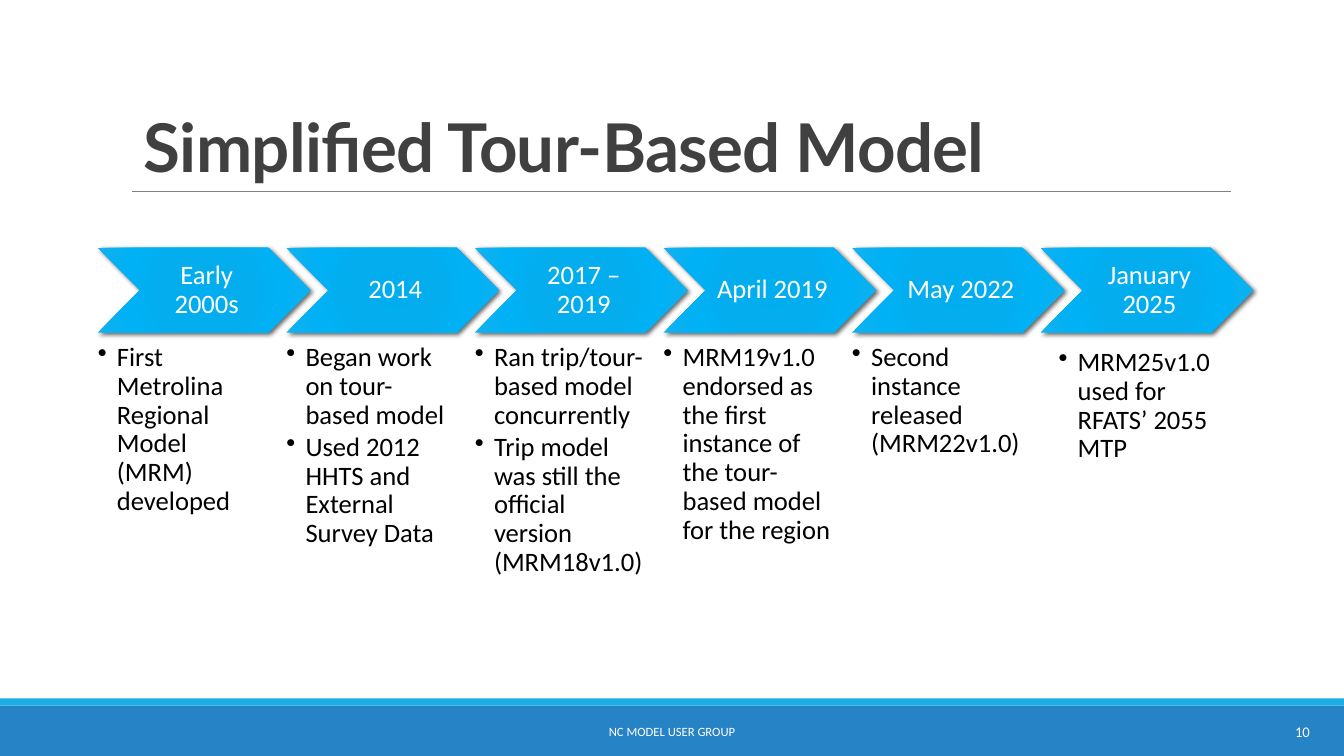
from dataclasses import dataclass

from lxml import etree
from pptx import Presentation
from pptx import util as u
from pptx.dml.color import RGBColor
from pptx.enum import shapes, text
from pptx.oxml import ns


@dataclass(frozen=True)
class Theme:
    footer: str = "2683C6"
    accent: str = "1CADE4"
    rule: str = "808080"
    title: str = "404040"
    body: str = "000000"
    light: str = "FFFFFF"
    shadow: str = "000000"
    chevron: tuple = ((0, "00ADEF"), (34, "03ADEE"), (70, "00B1F5"), (100, "12B1EE"))
    title_font: str = "Lato"
    body_font: str = "Calibri"
    title_size: float = 48
    body_size: float = 19
    page_size: float = 10.5
    footer_size: float = 9


# The grid has 133.3 columns and 75 rows, each a tenth of an inch
CELL = 0.1
COLUMNS, ROWS = 133.3, 75


def cells(count):
    return u.Inches(count * CELL)


def add_xml(parent, tag, **attributes):
    names = {key: str(value) for key, value in attributes.items()}
    return etree.SubElement(parent, ns.qn(tag), names)


class SlideBuilder:
    def __init__(self, deck, theme):
        self.theme = theme
        self.page = deck.slides.add_slide(deck.slide_layouts[6])

    def shape(self, kind, left, top, width, height):
        shape = self.page.shapes.add_shape(kind, *map(cells, (left, top, width, height)))
        shape.shadow.inherit = False
        shape.line.fill.background()
        return shape

    def bar(self, top, height, color):
        bar = self.shape(shapes.MSO_SHAPE.RECTANGLE, 0, top, COLUMNS, height)
        bar.fill.solid()
        bar.fill.fore_color.rgb = RGBColor.from_string(color)

    def rule(self, left, right, top):
        rule = self.page.shapes.add_connector(
            shapes.MSO_CONNECTOR.STRAIGHT, cells(left), cells(top), cells(right), cells(top))
        rule.line.color.rgb = RGBColor.from_string(self.theme.rule)
        rule.line.width = u.Pt(0.5)
        add_xml(rule._element.spPr, "a:effectLst")

    def set_text(self, shape, lines, size, color, font=None, align=text.PP_ALIGN.LEFT,
                 anchor=text.MSO_ANCHOR.MIDDLE, insets=(1, 0.5, 1, 0.5), spacing=1.0):
        frame = shape.text_frame
        frame.word_wrap = True
        frame.vertical_anchor = anchor
        (frame.margin_left, frame.margin_top,
         frame.margin_right, frame.margin_bottom) = map(cells, insets)
        for index, line in enumerate(lines):
            para = frame.add_paragraph() if index else frame.paragraphs[0]
            para.text = line
            para.alignment = align
            para.line_spacing = spacing
            para.font.name = font or self.theme.body_font
            para.font.size = u.Pt(size)
            para.font.color.rgb = RGBColor.from_string(color)
        return frame.paragraphs

    def text(self, left, top, width, height, lines, size, color, **style):
        box = self.page.shapes.add_textbox(*map(cells, (left, top, width, height)))
        return self.set_text(box, lines, size, color, **style)

    def title(self, left, top, width, height, line):
        theme = self.theme
        para, = self.text(left, top, width, height, [line], theme.title_size, theme.title,
                          font=theme.title_font, anchor=text.MSO_ANCHOR.BOTTOM, spacing=0.85)
        para.font.bold = True
        for span in para.runs:
            span._r.get_or_add_rPr().set("spc", "-50")

    def bullets(self, left, top, width, height, lines, insets):
        paras = self.text(left, top, width, height, lines, self.theme.body_size,
                          self.theme.body, anchor=text.MSO_ANCHOR.TOP,
                          insets=insets, spacing=0.9)
        for para in paras:
            para.space_after = u.Pt(2.5)
            props = para._p.get_or_add_pPr()
            props.set("marL", str(cells(1.9)))
            props.set("indent", str(cells(-1.9)))
            bullet = add_xml(props, "a:buChar", char="•")
            props.find(ns.qn("a:defRPr")).addprevious(bullet)

    def chevron(self, left, top, width, height, label):
        chevron = self.shape(shapes.MSO_SHAPE.CHEVRON, left, top, width, height)
        chevron.adjustments[0] = 0.5
        props = chevron._element.spPr

        # Radial gradient
        gradient = add_xml(props, "a:gradFill", rotWithShape=1)
        stops = add_xml(gradient, "a:gsLst")
        for position, color in self.theme.chevron:
            add_xml(add_xml(stops, "a:gs", pos=position * 1000), "a:srgbClr", val=color)
        focus = add_xml(gradient, "a:path", path="circle")
        add_xml(focus, "a:fillToRect", l=100000, t=100000, r=100000, b=100000)
        props.find(ns.qn("a:ln")).addprevious(gradient)

        # Soft shadow
        shadow = add_xml(props.find(ns.qn("a:effectLst")), "a:outerShdw", blurRad=u.Pt(3.5),
                         dist=u.Pt(2), dir=45 * 60000, algn="ctr", rotWithShape=0)
        color = add_xml(shadow, "a:srgbClr", val=self.theme.shadow)
        add_xml(color, "a:alpha", val=60000)

        self.set_text(chevron, [label], self.theme.body_size, self.theme.light,
                      align=text.PP_ALIGN.CENTER, insets=(0.8, 0.3, 0.3, 0.3), spacing=0.9)


MILESTONES = [
    ("Early 2000s", ["First Metrolina Regional Model (MRM) developed"]),
    ("2014", ["Began work on tour-based model",
              "Used 2012 HHTS and External Survey Data"]),
    ("2017 – 2019", ["Ran trip/tour-based model concurrently",
                     "Trip model was still the official version (MRM18v1.0)"]),
    ("April 2019", ["MRM19v1.0 endorsed as the first instance of the tour-based model "
                    "for the region"]),
    ("May 2022", ["Second instance released (MRM22v1.0)"]),
    ("January 2025", ["MRM25v1.0 used for RFATS’ 2055 MTP"]),
]
FIRST, STEP = 9.7, 18.7


def main():
    deck = Presentation()
    deck.slide_width, deck.slide_height = cells(COLUMNS), cells(ROWS)
    theme = Theme()
    slide = SlideBuilder(deck, theme)

    # Footer bands, title and rule
    slide.bar(70, 5, theme.footer)
    slide.bar(69.3, 0.7, theme.accent)
    slide.rule(13.1, 122.1, 19)
    slide.title(13.3, 3.1, 108.7, 15.9, "Simplified Tour-Based Model")

    # Timeline: the last note stands in a slightly shifted, padded box
    for index, (date, notes) in enumerate(MILESTONES):
        left = FIRST + index * STEP
        slide.chevron(left, 24.6, 21.1, 8.4, date)
        if index < len(MILESTONES) - 1:
            slide.bullets(left, 34.1, 16.9, 23.7, notes, insets=(0, 0, 0, 0))
        else:
            slide.bullets(left + 0.8, 34.1, 17.2, 12.5, notes, insets=(1, 0.5, 1, 0.5))

    # Page number and footer
    slide.text(116.6, 70.6, 14.3, 4, ["10"], theme.page_size, theme.light,
               align=text.PP_ALIGN.RIGHT)
    slide.text(40.3, 70.6, 52.7, 4, ["NC MODEL USER GROUP"], theme.footer_size, theme.light,
               align=text.PP_ALIGN.CENTER)

    deck.save("out.pptx")


if __name__ == "__main__":
    main()
